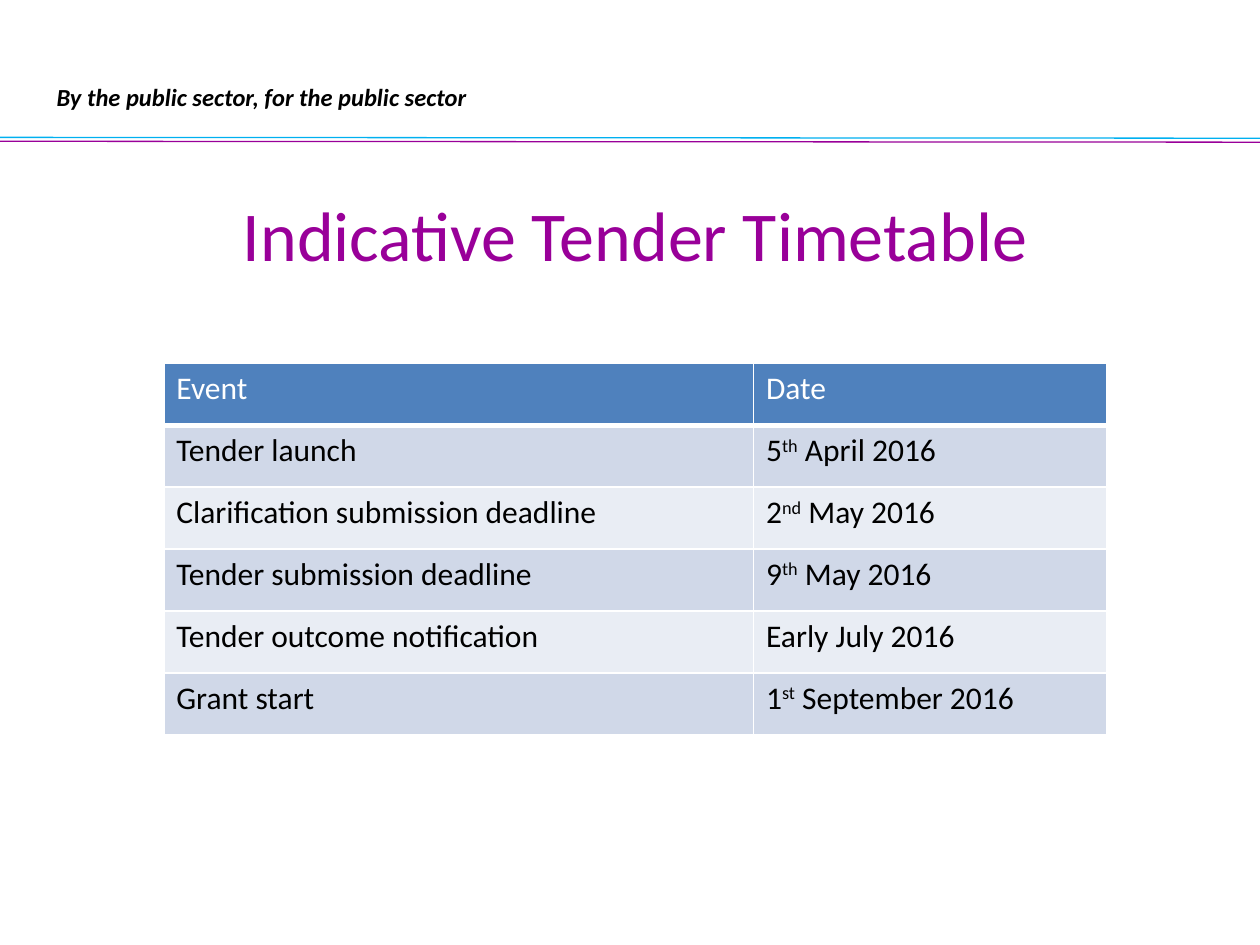
from lxml.etree import SubElement as Sub
from pptx import Presentation as Deck
from pptx.dml.color import RGBColor
from pptx.enum.shapes import MSO_CONNECTOR as Link
from pptx.enum.text import MSO_ANCHOR as Anchor, MSO_AUTO_SIZE as Fit, PP_ALIGN as Align
from pptx.oxml.ns import qn
from pptx.util import Pt

PLUM, SKY, BLUE = "990099", "00B0F0", "4F81BD"
BLACK, WHITE = "000000", "FFFFFF"
BANDS = "D0D8E8", "E9EDF4"
ROWS = [
    (["Event"], ["Date"]),
    (["Tender launch"], ["5", "th", " April 2016"]),
    (["Clarification submission deadline"], ["2", "nd", " May 2016"]),
    (["Tender submission deadline"], ["9", "th", " May 2016"]),
    (["Tender outcome notification"], ["Early July 2016"]),
    (["Grant start"], ["1", "st", " September 2016"]),
]


def color(code):
    return RGBColor.from_string(code)


class Page:
    font = "Calibri"

    def __init__(self, slide):
        self.slide = slide
        self.shapes = slide.shapes

    def words(self, para, text, size, tint, bold=False, slant=False, lift=False):
        run = para.add_run()
        run.text = text
        font = run.font
        font.name, font.size = self.font, Pt(size)
        font.bold, font.italic = bold, slant
        font.color.rgb = color(tint)
        if lift:
            run._r.get_or_add_rPr().set("baseline", "30000")

    def rule(self, top, tint):
        line = self.shapes.add_connector(Link.STRAIGHT, 0, Pt(top), Pt(720), Pt(top + 0.5))
        line.line.color.rgb = color(tint)
        line.line.width = Pt(0.75)
        Sub(line._element.spPr, qn("a:effectLst"))

    def label(self, text, box, size, tint):
        shape = self.shapes.add_textbox(*map(Pt, box))
        frame = shape.text_frame
        frame.word_wrap = True
        frame.auto_size = Fit.SHAPE_TO_FIT_TEXT
        self.words(frame.paragraphs[0], text, size, tint, bold=True, slant=True)

    def title(self, text, box, size, tint):
        shape = self.shapes.title
        shape.left, shape.top, shape.width, shape.height = map(Pt, box)
        frame = shape.text_frame
        frame.word_wrap = True
        frame.auto_size = Fit.SHAPE_TO_FIT_TEXT
        frame.vertical_anchor = Anchor.TOP
        para = frame.paragraphs[0]
        para.alignment = Align.CENTER
        self.words(para, text, size, tint)

    def edge(self, cell, side, width):
        line = Sub(cell._tc.get_or_add_tcPr(), qn(f"a:ln{side}"), w=str(Pt(width)))
        fill = Sub(line, qn("a:solidFill"))
        Sub(fill, qn("a:srgbClr"), val=WHITE)

    def cell(self, cell, parts, fill, tint, base):
        for side, width in zip("LRTB", (1, 1, 1, base)):
            self.edge(cell, side, width)
        cell.fill.solid()
        cell.fill.fore_color.rgb = color(fill)
        para = cell.text_frame.paragraphs[0]
        for i, text in enumerate(parts):
            self.words(para, text, 18, tint, lift=i == 1)

    def table(self, rows, left, top, cols, high):
        box = map(Pt, (left, top, sum(cols), high * len(rows)))
        grid = self.shapes.add_table(len(rows), len(cols), *box).table
        grid.first_row = grid.horz_banding = False
        for col, wide in zip(grid.columns, cols):
            col.width = Pt(wide)
        for i, row in enumerate(rows):
            grid.rows[i].height = Pt(high)
            look = (BANDS[(i - 1) % 2], BLACK, 1) if i else (BLUE, WHITE, 3)
            for j, parts in enumerate(row):
                self.cell(grid.cell(i, j), parts, *look)


def main():
    deck = Deck()
    deck.slide_width, deck.slide_height = Pt(720), Pt(540)
    page = Page(deck.slides.add_slide(deck.slide_layouts[5]))
    page.rule(80.75, PLUM)
    page.rule(78.5, SKY)
    page.label("By the public sector, for the public sector", (25.2, 43.5, 289.5, 24), 14, BLACK)
    page.title("Indicative Tender Timetable", (54, 105.8, 617.8, 55.7), 40, PLUM)
    page.table(ROWS, 93.6, 207.6, (337, 201.6), 35.4)
    deck.save("out.pptx")


if __name__ == "__main__":
    main()
